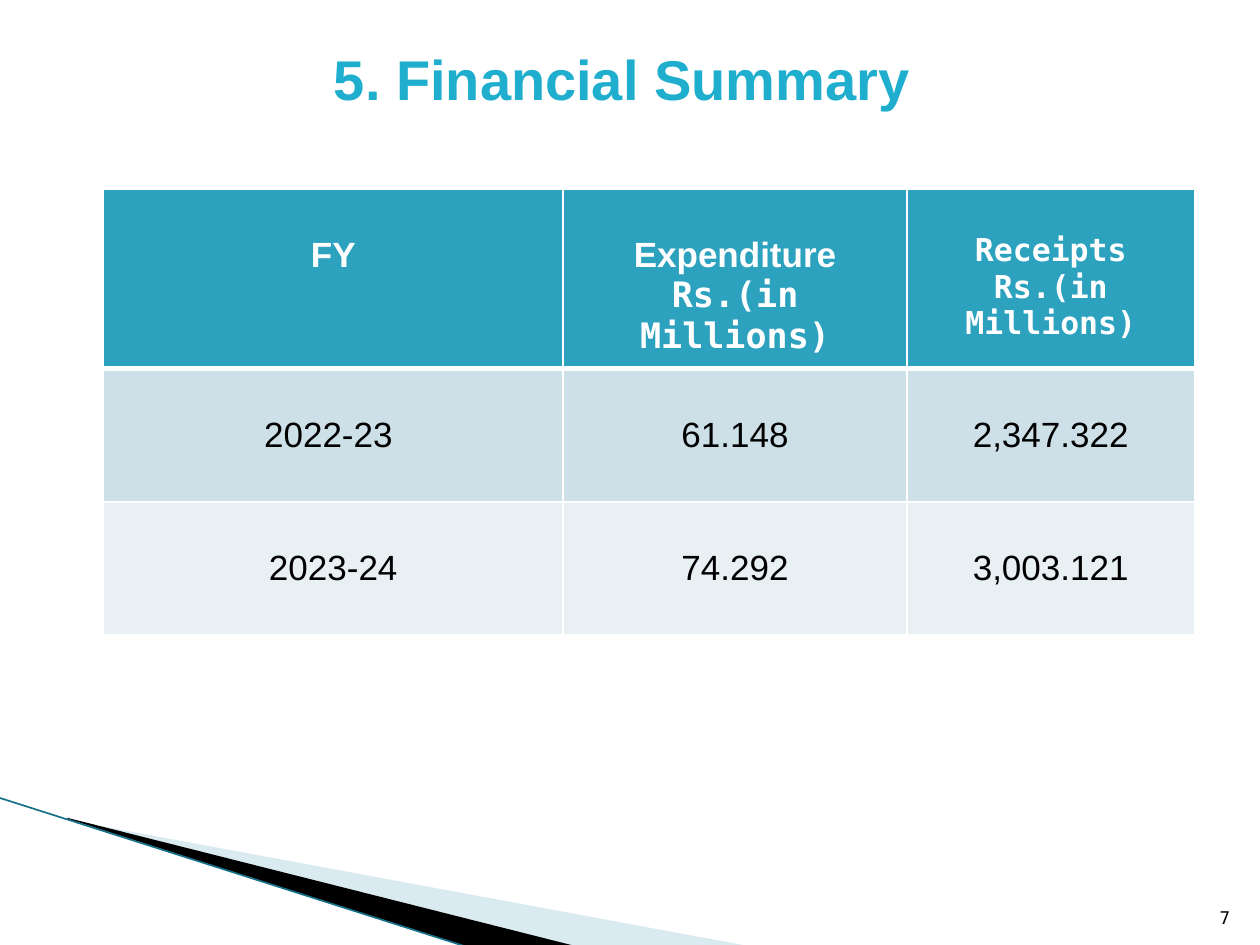
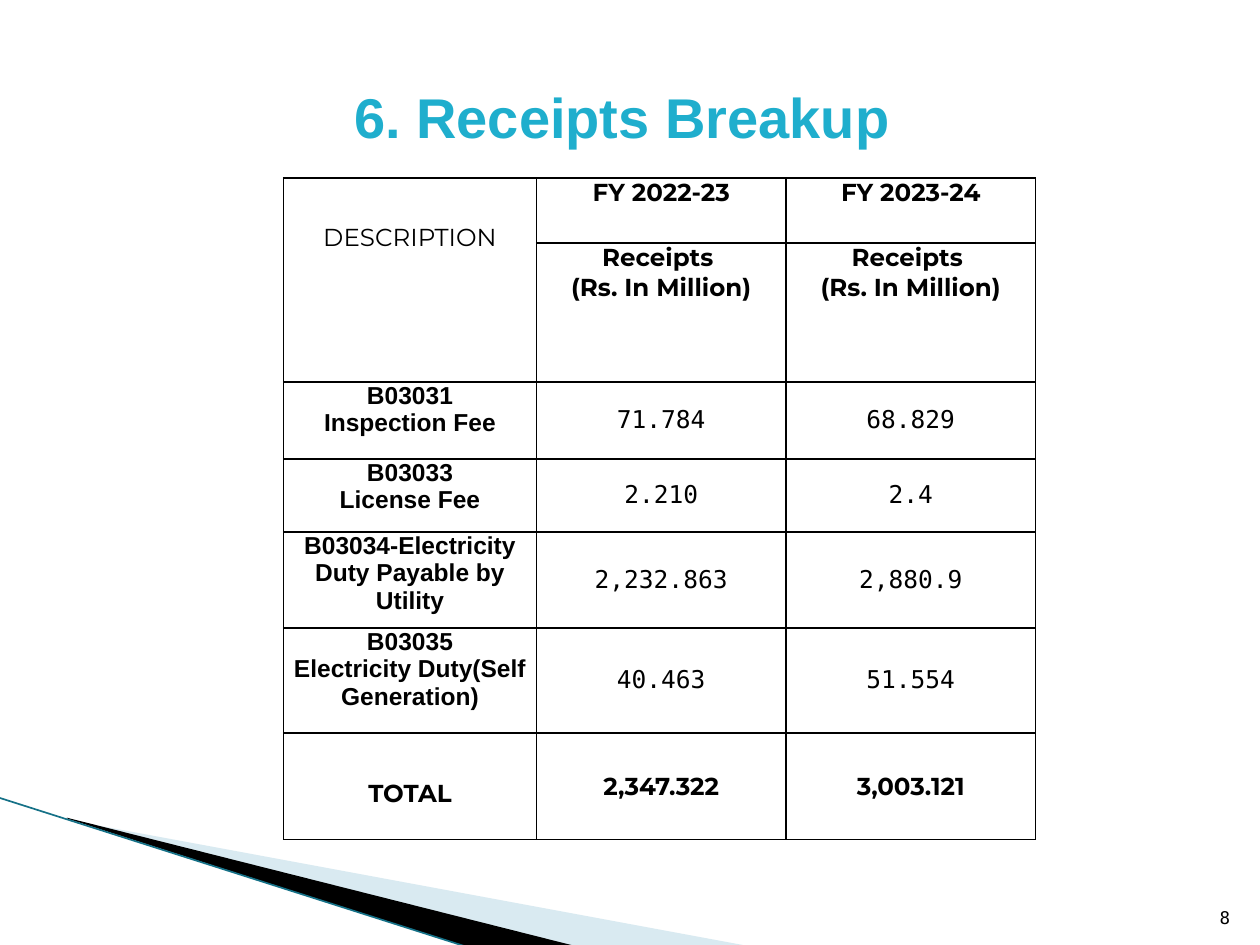
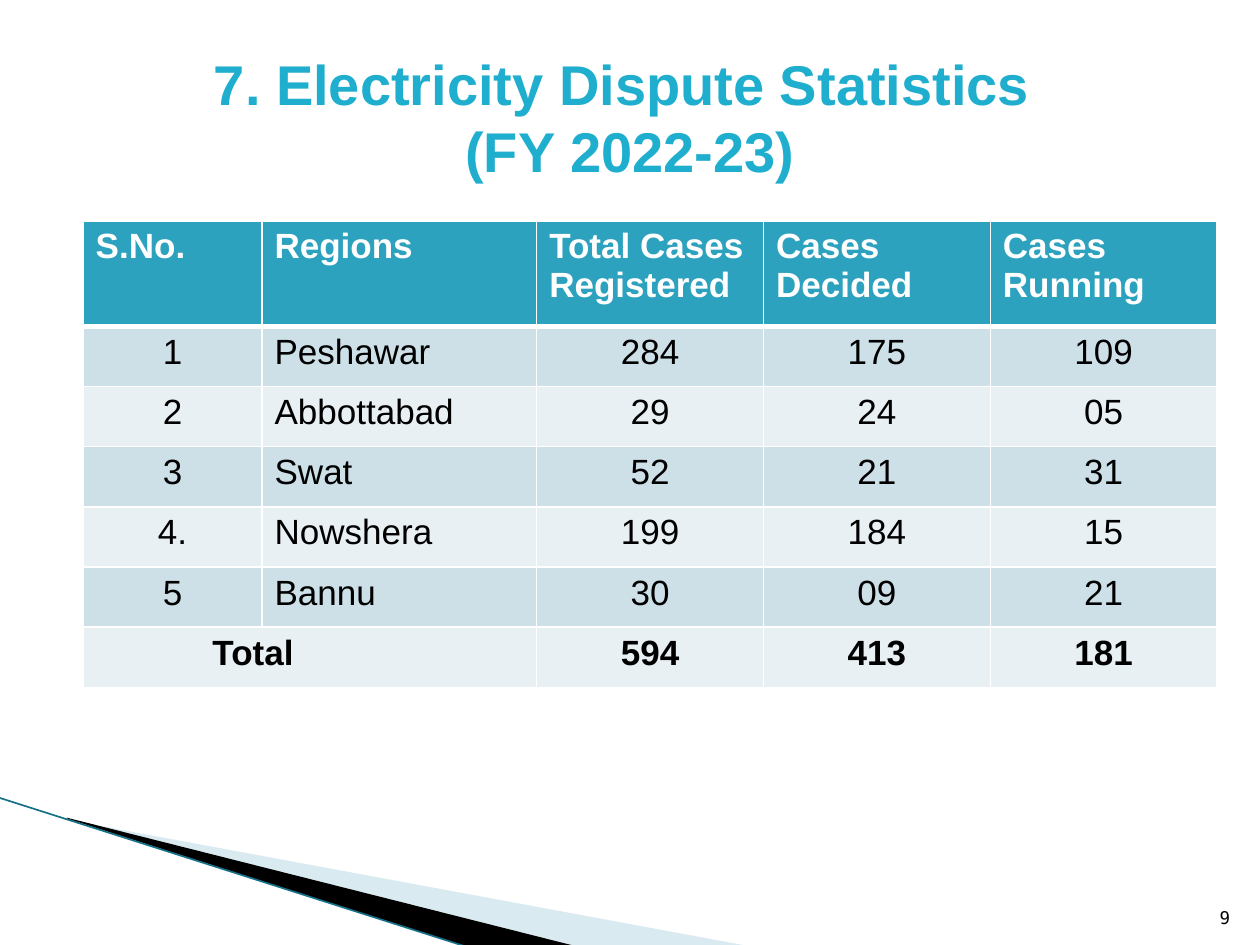
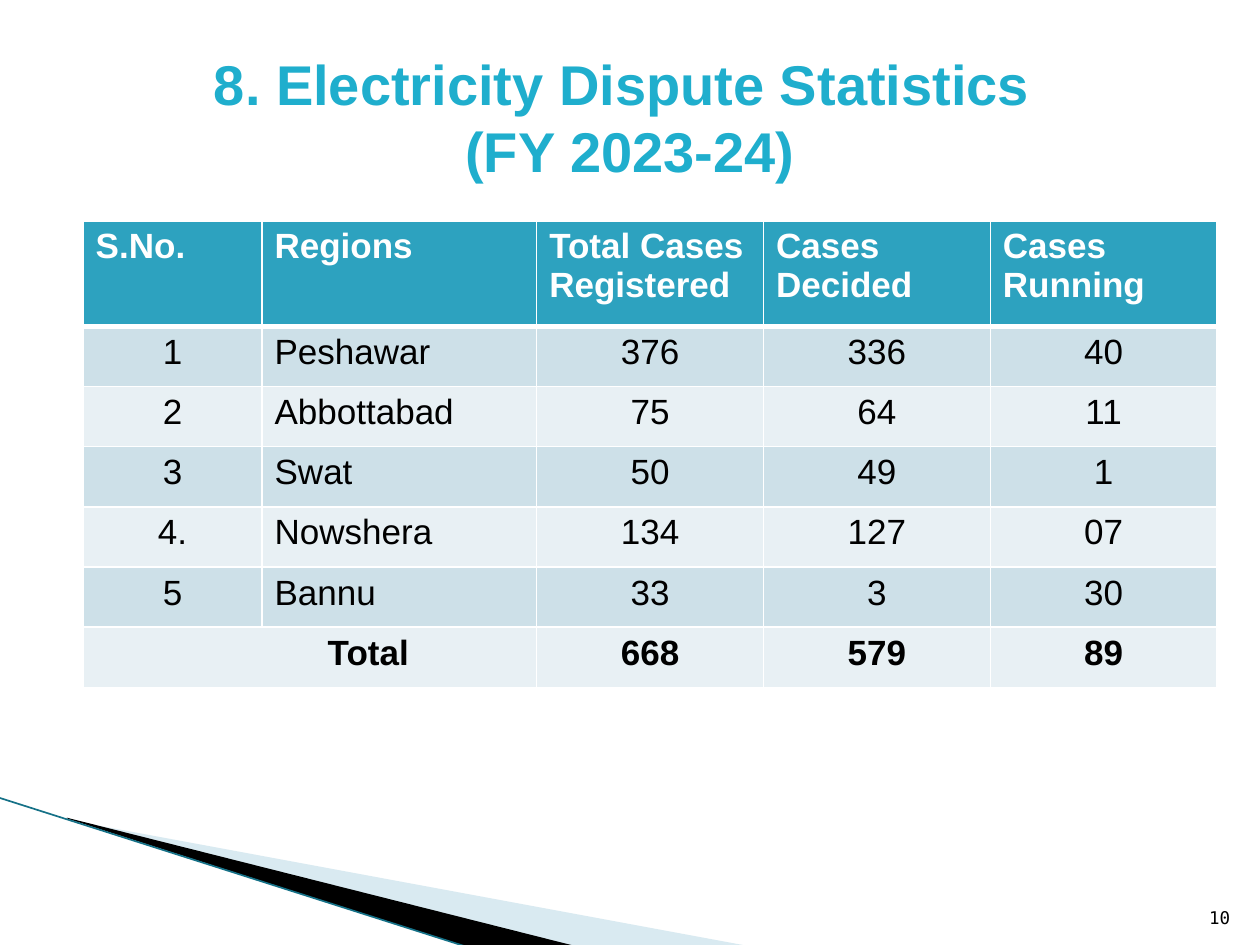
from dataclasses import dataclass, replace

from lxml import etree
from pptx import Presentation
from pptx.dml.color import RGBColor
from pptx.enum import shapes, text
from pptx.oxml import ns
from pptx.util import Pt

LEFT, CENTER, RIGHT = text.PP_ALIGN.LEFT, text.PP_ALIGN.CENTER, text.PP_ALIGN.RIGHT
TOP, MIDDLE, BOTTOM = (text.MSO_ANCHOR.TOP, text.MSO_ANCHOR.MIDDLE,
                       text.MSO_ANCHOR.BOTTOM)


@dataclass(frozen=True)
class Theme:
    title: str = "1FAECD"
    header: str = "2DA2BF"
    band_dark: str = "CDE0E8"
    band_light: str = "E8F0F4"
    wedge: str = "A0CBDC"
    edge: str = "157187"
    black: str = "000000"
    white: str = "FFFFFF"
    sans: str = "Arial"
    mono: str = "DejaVu Sans Mono"
    display: str = "Montserrat"
    title_size: int = 32
    table_size: int = 20
    small_size: int = 18
    grid_size: int = 14
    number_size: int = 10


T = Theme()


@dataclass(frozen=True)
class Style:
    font: str = T.sans
    size: int = T.table_size
    bold: bool = False
    color: str = T.black
    align: int = CENTER
    anchor: int = TOP
    spacing: float = 1.0
    insets: tuple = (7.2, 3.6, 7.2, 3.6)  # left, top, right, bottom
    next_font: str = ""                   # for paragraphs after the first


# Text styles
TITLE = Style(size=T.title_size, bold=True, color=T.title, anchor=MIDDLE)
RAISED_TITLE = replace(TITLE, insets=(7.2, 3.6, 7.2, 40.4))
NUMBER = Style(T.mono, T.number_size, align=RIGHT, anchor=BOTTOM)

BODY = Style()
BODY_LEFT = replace(BODY, align=LEFT)
BODY_MIDDLE = replace(BODY, anchor=MIDDLE)
TOTAL = replace(BODY, bold=True)
TOTAL_LABEL = replace(TOTAL, insets=(73.9, 3.6, 7.2, 3.6))
HEAD = Style(bold=True, color=T.white, align=LEFT)
HEAD_LOW = replace(HEAD, align=CENTER, insets=(7.2, 26.6, 7.2, 3.6),
                   next_font=T.mono)
HEAD_MONO = replace(HEAD_LOW, font=T.mono, size=T.small_size,
                    insets=(7.2, 24.6, 7.2, 3.6))

GRID_HEAD = Style(T.display, T.grid_size, bold=True, insets=(5, 0, 5, 0))
GRID_CORNER = replace(GRID_HEAD, bold=False, spacing=1.5, insets=(5, 17, 5, 0))
GRID_LABEL = replace(GRID_HEAD, font=T.sans)
GRID_VALUE = replace(GRID_HEAD, font=T.mono, bold=False, anchor=MIDDLE)
GRID_TOTAL = replace(GRID_HEAD, anchor=MIDDLE)
GRID_TOTAL_LABEL = replace(GRID_TOTAL, spacing=1.5)


def rgb(color):
    return RGBColor.from_string(color)


# Text
def write(tf, content, st):
    """Fill a text frame: one paragraph per line, \\v for a line break."""
    for i, line in enumerate(content.split("\n")):
        p = tf.paragraphs[0] if i == 0 else tf.add_paragraph()
        p.text = line
        p.alignment = st.align
        if st.spacing != 1:
            p.line_spacing = st.spacing
        p.font.name = st.next_font if i and st.next_font else st.font
        p.font.size = Pt(st.size)
        p.font.bold = st.bold
        p.font.color.rgb = rgb(st.color)


def add_text(s, box, content, st):
    tf = s.shapes.add_textbox(*map(Pt, box)).text_frame
    tf.word_wrap = True
    tf.vertical_anchor = st.anchor
    (tf.margin_left, tf.margin_top,
     tf.margin_right, tf.margin_bottom) = map(Pt, st.insets)
    write(tf, content, st)


def add_title(s, content, top=21.6, st=TITLE):
    add_text(s, (36, top, 648, 90), content, st)


def add_number(s, number):
    add_text(s, (681, 504.7, 29, 29), str(number), NUMBER)


# Corner decoration
def add_wedge(s, points, color, alpha=None):
    start, *rest = [(Pt(x), Pt(y)) for x, y in points]
    fb = s.shapes.build_freeform(*start)
    fb.add_line_segments(rest, close=True)
    sp = fb.convert_to_shape()
    sp.shadow.inherit = False
    sp.fill.solid()
    sp.fill.fore_color.rgb = rgb(color)
    sp.line.fill.background()
    if alpha:
        clr = sp.fill._xPr.find(".//" + ns.qn("a:srgbClr"))
        etree.SubElement(clr, ns.qn("a:alpha"), val=str(alpha * 1000))


def add_corner(s):
    add_wedge(s, [(39.6, 468.7), (428.4, 540.7), (328.3, 540.7), (39.6, 468)],
              T.wedge, alpha=40)
    add_wedge(s, [(38.2, 467.3), (329, 540.7), (267.8, 541.4), (38.9, 468)],
              T.black)
    edge = s.shapes.add_connector(shapes.MSO_CONNECTOR.STRAIGHT,
                                  Pt(-0.7), Pt(455.8), Pt(267.8), Pt(541.4))
    edge.line.color.rgb = rgb(T.edge)
    edge.line.width = Pt(0.95)
    etree.SubElement(edge._element.spPr, ns.qn("a:effectLst"))


# Tables
def set_borders(cell, color, top=1, bottom=1):
    tc_pr = cell._tc.get_or_add_tcPr()
    for side, width in (("L", 1), ("R", 1), ("T", top), ("B", bottom)):
        ln = etree.SubElement(tc_pr, ns.qn("a:ln" + side), w=str(Pt(width)))
        fill = etree.SubElement(ln, ns.qn("a:solidFill"))
        etree.SubElement(fill, ns.qn("a:srgbClr"), val=color)


def add_table(s, left, top, cols, heights, rows, banded=True, merge=None):
    """rows holds (text, style) pairs, or None where a merged cell covers."""
    frame = s.shapes.add_table(len(rows), len(cols), Pt(left), Pt(top),
                               Pt(sum(cols)), Pt(sum(heights)))
    table = frame.table
    table.first_row = banded
    table.horz_banding = False
    for col, width in zip(table.columns, cols):
        col.width = Pt(width)
    for r, (row, height) in enumerate(zip(rows, heights)):
        table.rows[r].height = Pt(height)
        for c, item in enumerate(row):
            cell = table.cell(r, c)
            if banded:
                set_borders(cell, T.white, top=3 if r == 1 else 1,
                            bottom=3 if r == 0 else 1)
                cell.fill.solid()
                band = T.band_dark if r % 2 else T.band_light
                cell.fill.fore_color.rgb = rgb(band if r else T.header)
            else:
                set_borders(cell, T.black)
                cell.fill.background()
            if item:
                content, st = item
                cell.vertical_anchor = st.anchor
                (cell.margin_left, cell.margin_top,
                 cell.margin_right, cell.margin_bottom) = map(Pt, st.insets)
                write(cell.text_frame, content, st)
    if merge:
        first, last = merge
        table.cell(*first).merge(table.cell(*last))


def styled(values, *styles):
    """Pair values with styles; the last style serves all that follow."""
    return [(v, styles[min(i, len(styles) - 1)]) for i, v in enumerate(values)]


# Slides
def financial_summary(s):
    add_title(s, "5. Financial Summary ", top=18, st=RAISED_TITLE)
    rows = [
        styled(["FY", "Expenditure\nRs.(in Millions)",
                "Receipts\nRs.(in Millions)"], HEAD_LOW, HEAD_LOW, HEAD_MONO),
        styled(["2022-23 ", "61.148", "2,347.322"], BODY_MIDDLE),
        styled(["2023-24", "74.292", "3,003.121"], BODY_MIDDLE),
    ]
    add_table(s, 59.2, 108.3, (262.6, 196.6, 164.2), (97.7, 76.2, 76.2), rows)


def receipts_breakup(s):
    receipts = "Receipts \n(Rs. In Million)"
    fees = [
        ("B03031\nInspection Fee", "71.784", "68.829"),
        ("B03033\nLicense Fee", "2.210", "2.4"),
        ("B03034-Electricity Duty Payable by Utility", "2,232.863", "2,880.9"),
        ("B03035\nElectricity Duty(Self Generation)", "40.463", "51.554"),
    ]
    rows = [styled(["DESCRIPTION", "FY 2022-23", "FY 2023-24"],
                   GRID_CORNER, GRID_HEAD),
            [None] + styled([receipts, receipts], GRID_HEAD)]
    rows += [styled(fee, GRID_LABEL, GRID_VALUE) for fee in fees]
    rows.append(styled(["TOTAL", "2,347.322", "3,003.121"],
                       GRID_TOTAL_LABEL, GRID_TOTAL))
    add_table(s, 162, 101.7, (144.6, 142.6, 142.6),
              (37.1, 79.4, 44, 41.7, 54.9, 60, 61.1), rows,
              banded=False, merge=((0, 0), (1, 0)))
    add_title(s, "6. Receipts Breakup ")


def dispute_statistics(s, title, cases, totals, total_align):
    add_title(s, title)
    regions = [("1", "Peshawar"), ("2", "Abbottabad"), ("3", "Swat"),
               ("4.", "Nowshera"), ("5", "Bannu")]
    rows = [styled(["S.No.", "Regions", "Total Cases Registered",
                    "Cases Decided", "Cases Running"], HEAD)]
    rows += [styled(region + counts, BODY, BODY_LEFT, BODY)
             for region, counts in zip(regions, cases)]
    label = replace(TOTAL_LABEL, align=total_align)
    rows.append([("Total", label), None] + styled(totals, TOTAL))
    add_table(s, 47.5, 126.2, [102.2, 157] + [129.6] * 3,
              [60.3] + [34.4] * 6, rows, merge=((6, 0), (6, 1)))


def disputes_2022(s):
    dispute_statistics(
        s, "7. Electricity Dispute Statistics \v(FY 2022-23)",
        [("284", "175", "109"), ("29", "24", "05"), ("52", "21", "31"),
         ("199", "184", "15"), ("30", "09", "21")],
        ("594", "413", "181"), LEFT)


def disputes_2023(s):
    dispute_statistics(
        s, "8. Electricity Dispute Statistics \v(FY 2023-24)",
        [("376", "336", "40"), ("75", "64", "11"), ("50", "49", "1"),
         ("134", "127", "07"), ("33", "3", "30")],
        ("668", "579", "89"), CENTER)


def main():
    prs = Presentation()
    prs.slide_width, prs.slide_height = Pt(720), Pt(540)
    builders = (financial_summary, receipts_breakup,
                disputes_2022, disputes_2023)
    for number, build in enumerate(builders, start=7):
        s = prs.slides.add_slide(prs.slide_layouts[6])
        add_corner(s)
        add_number(s, number)
        build(s)
    prs.save("out.pptx")


if __name__ == "__main__":
    main()
